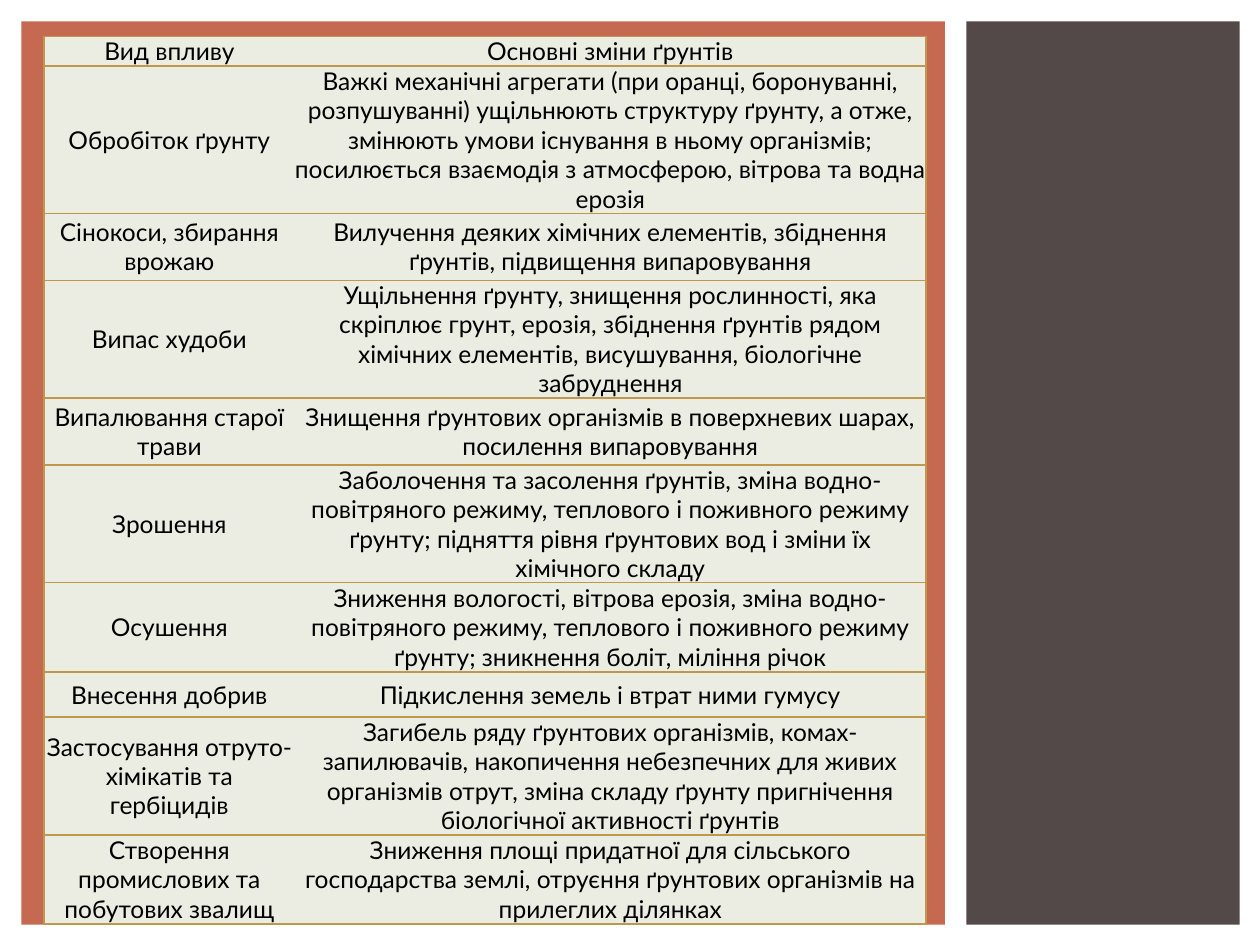
import pptx
import pptx.dml.color
import pptx.enum.shapes
import pptx.enum.text
import pptx.util
from lxml import etree
from pptx.util import Cm

A = "http://schemas.openxmlformats.org/drawingml/2006/main"


def color(hex_value):
    return pptx.dml.color.RGBColor.from_string(hex_value)


def set_border(cell, side, hex_value=None):
    line = etree.SubElement(cell._tc.get_or_add_tcPr(), f"{{{A}}}ln{side}", w="12700")
    if hex_value is None:
        etree.SubElement(line, f"{{{A}}}noFill")
    else:
        fill = etree.SubElement(line, f"{{{A}}}solidFill")
        etree.SubElement(fill, f"{{{A}}}srgbClr", val=hex_value)


prs = pptx.Presentation()
prs.slide_width, prs.slide_height = Cm(25.4), Cm(19.05)
s = prs.slides.add_slide(prs.slide_layouts[6])

# Background panels: left, width, fill
for left, width, fill in [(19.48, 5.51, "534949"), (0.43, 18.62, "C66951")]:
    sp = s.shapes.add_shape(pptx.enum.shapes.MSO_SHAPE.RECTANGLE,
                            Cm(left), Cm(0.43), Cm(width), Cm(18.21))
    sp.shadow.inherit = False
    sp.fill.solid()
    sp.fill.fore_color.rgb = color(fill)
    sp.line.fill.background()

# Table rows: height, kind of impact, changes in the soil
rows = [
    (0.46, "Вид впливу", "Основні зміни ґрунтів"),
    (2.72, "Обробіток ґрунту",
     "Важкі механічні агрегати (при оранці, боронуванні, розпушуванні) ущільнюють "
     "структуру ґрунту, а отже, змінюють умови існування в ньому організмів; "
     "посилюється взаємодія з атмосферою, вітрова та водна ерозія"),
    (1.35, "Сінокоси, збирання врожаю",
     "Вилучення деяких хімічних елементів, збіднення ґрунтів, підвищення випаровування"),
    (2.26, "Випас худоби",
     "Ущільнення ґрунту, знищення рослинності, яка скріплює грунт, ерозія, збіднення "
     "ґрунтів рядом хімічних елементів, висушування, біологічне забруднення"),
    (1.35, "Випалювання старої трави",
     "Знищення ґрунтових організмів в поверхневих шарах, посилення випаровування"),
    (2.26, "Зрошення",
     "Заболочення та засолення ґрунтів, зміна водно-повітряного режиму, теплового і "
     "поживного режиму ґрунту; підняття рівня ґрунтових вод і зміни їх хімічного складу"),
    (1.8, "Осушення",
     "Зниження вологості, вітрова ерозія, зміна водно-повітряного режиму, теплового і "
     "поживного режиму ґрунту; зникнення боліт, міління річок"),
    (0.91, "Внесення добрив", "Підкислення земель і втрат ними гумусу"),
    (2.26, "Застосування отруто-хімікатів та гербіцидів",
     "Загибель ряду ґрунтових організмів, комах-запилювачів, накопичення небезпечних "
     "для живих організмів отрут, зміна складу ґрунту пригнічення біологічної "
     "активності ґрунтів"),
    (1.8, "Створення промислових та побутових звалищ",
     "Зниження площі придатної для сільського господарства землі, отруєння ґрунтових "
     "організмів на прилеглих ділянках"),
]
col_widths = [5.05, 12.73]
table = s.shapes.add_table(len(rows), 2, Cm(0.89), Cm(0.74), Cm(sum(col_widths)),
                           Cm(sum(row[0] for row in rows))).table
table.first_row = table.horz_banding = False
for column, width in zip(table.columns, col_widths):
    column.width = Cm(width)

for i, (height, *texts) in enumerate(rows):
    table.rows[i].height = Cm(height)
    for j, text in enumerate(texts):
        cell = table.cell(i, j)
        cell.margin_left = cell.margin_right = cell.margin_top = cell.margin_bottom = 0
        cell.vertical_anchor = pptx.enum.text.MSO_ANCHOR.MIDDLE
        # Lines around the table and between rows, none between columns
        for side in "LRTB":
            inner = side == "RL"[j]
            set_border(cell, side, None if inner else "BF974D")
        cell.fill.solid()
        cell.fill.fore_color.rgb = color("EBEDE3")
        p = cell.text_frame.paragraphs[0]
        p.text = text
        p.alignment = pptx.enum.text.PP_ALIGN.CENTER
        p.font.name = "Lato"
        p.font.size = pptx.util.Pt(14)
        p.font.color.rgb = color("000000")

prs.save("out.pptx")
